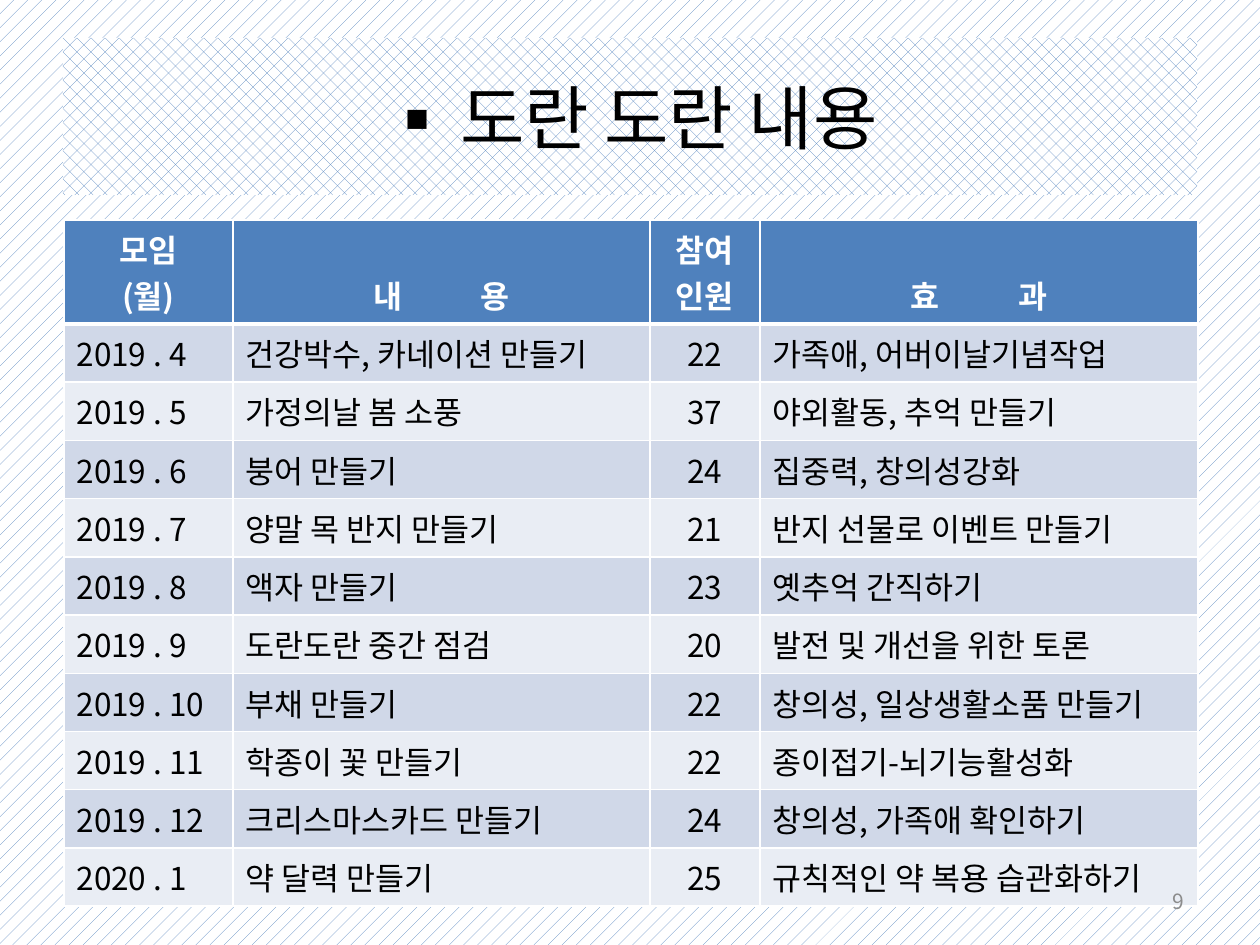
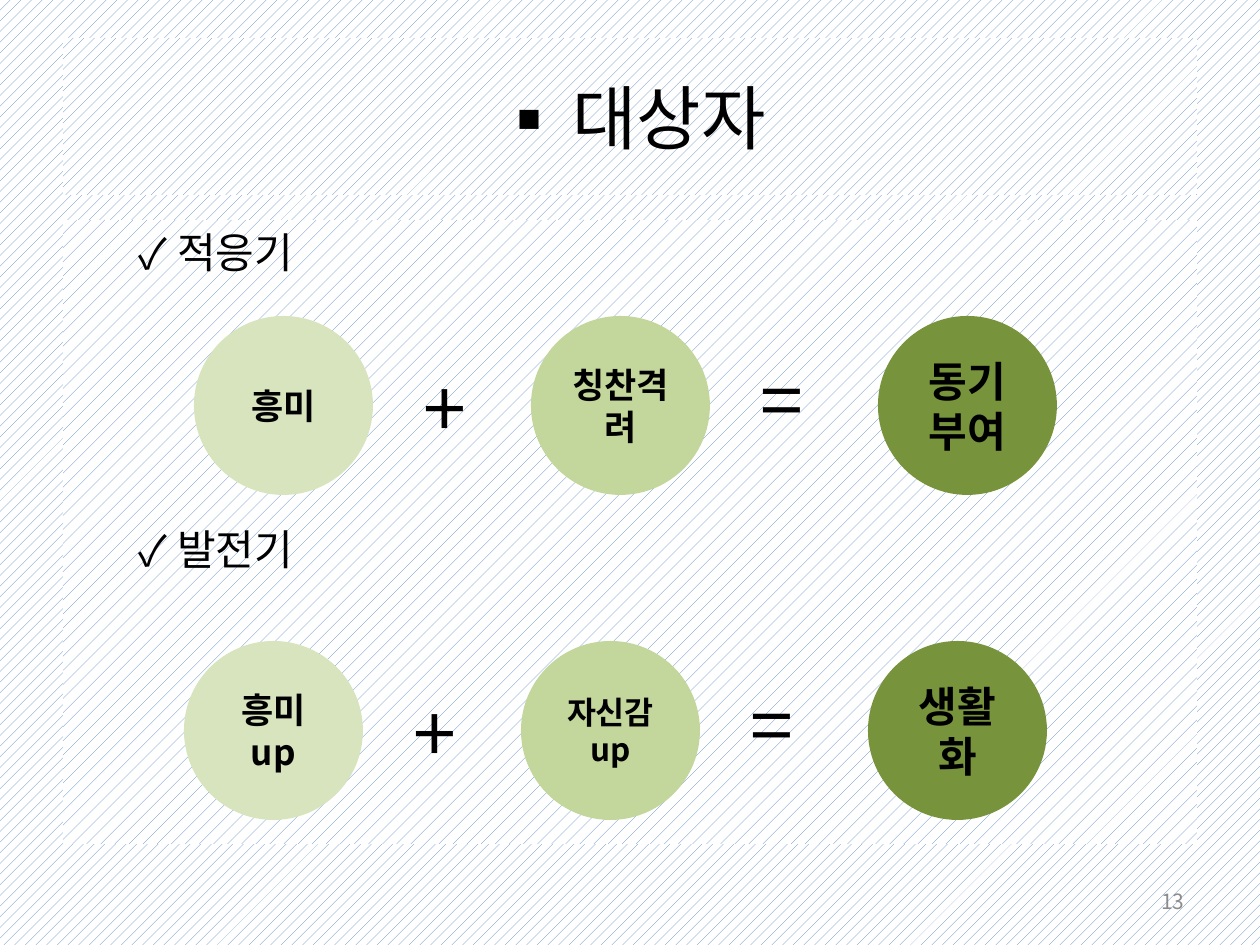
from dataclasses import dataclass

from lxml import etree
from pptx import Presentation
from pptx.dml.color import RGBColor
from pptx.enum.dml import MSO_PATTERN
from pptx.enum.shapes import MSO_SHAPE
from pptx.enum.text import MSO_ANCHOR, PP_ALIGN
from pptx.oxml.ns import qn
from pptx.util import Emu, Pt

PX_PER_INCH = 126
TITLE_ONLY = 5
LEFT, CENTER, RIGHT = PP_ALIGN.LEFT, PP_ALIGN.CENTER, PP_ALIGN.RIGHT
MIDDLE, BOTTOM = MSO_ANCHOR.MIDDLE, MSO_ANCHOR.BOTTOM
SPARSE, LIGHT, CROSSED = (
    MSO_PATTERN.PERCENT_10, MSO_PATTERN.PERCENT_20, MSO_PATTERN.PERCENT_25)
OVAL, RECTANGLE = MSO_SHAPE.OVAL, MSO_SHAPE.RECTANGLE


@dataclass(frozen=True)
class Theme:
    font: str = "Noto Sans CJK KR"
    black: str = "000000"
    white: str = "FFFFFF"
    blue: str = "4F81BD"
    grey: str = "8C8C8C"
    bands: tuple = ("D0D8E8", "E9EDF4")
    greens: tuple = ("D7E4BD", "C3D69B", "77933C")
    title: int = 40
    symbol: int = 44
    heading: int = 24
    circle: int = 20
    table: int = 18
    page: int = 12


THEME = Theme()

COLUMN_WIDTHS = (169, 417, 110, 438)
COLUMN_ALIGNMENTS = (LEFT, LEFT, CENTER, LEFT)
HEADER_HEIGHT, ROW_HEIGHT = 103, 51
SPREAD_GAP = 41  # points added to the space between two spread letters
HEADERS = (("모임", "(월)"), ("내 용",), ("참여인원",), ("효 과",))
SPREAD_HEADERS = ("내 용", "효 과")
MEETINGS = (
    ("2019 . 4", "건강박수, 카네이션 만들기", "22", "가족애, 어버이날기념작업"),
    ("2019 . 5", "가정의날 봄 소풍", "37", "야외활동, 추억 만들기"),
    ("2019 . 6", "붕어 만들기", "24", "집중력, 창의성강화"),
    ("2019 . 7", "양말 목 반지 만들기", "21", "반지 선물로 이벤트 만들기"),
    ("2019 . 8", "액자 만들기", "23", "옛추억 간직하기"),
    ("2019 . 9", "도란도란 중간 점검", "20", "발전 및 개선을 위한 토론"),
    ("2019 . 10", "부채 만들기", "22", "창의성, 일상생활소품 만들기"),
    ("2019 . 11", "학종이 꽃 만들기", "22", "종이접기-뇌기능활성화"),
    ("2019 . 12", "크리스마스카드 만들기", "24", "창의성, 가족애 확인하기"),
    ("2020 . 1", "약 달력 만들기", "25", "규칙적인 약 복용 습관화하기"),
)

CIRCLE_SIZE = 179
CIRCLE_OFFSETS = (0, 337, 684)
SYMBOL_OFFSETS = (("+", 217, 38), ("=", 554, 30))


def px(length):
    return Emu(round(length * 914400 / PX_PER_INCH))


def box(*lengths):
    return [px(length) for length in lengths]


def color(value):
    return RGBColor.from_string(value)


def add_run(paragraph, text, size, ink=THEME.black, bold=False):
    run = paragraph.add_run()
    run.text = text
    font = run.font
    font.name, font.size, font.bold = THEME.font, Pt(size), bold
    font.color.rgb = color(ink)
    properties = run._r.get_or_add_rPr()
    etree.SubElement(properties, qn("a:ea"), typeface=THEME.font)
    return run


def set_bullet(paragraph, character, indent, hanging):
    properties = paragraph._p.get_or_add_pPr()
    properties.set("marL", str(px(indent)))
    properties.set("indent", str(-px(hanging)))
    etree.SubElement(properties, qn("a:buFont"), typeface=THEME.font)
    etree.SubElement(properties, qn("a:buChar"), char=character)


def fill_pattern(fill, pattern):
    fill.patterned()
    fill.pattern = pattern
    fill.fore_color.rgb = color(THEME.blue)
    fill.back_color.rgb = color(THEME.white)


def add_page_number(slide, number):
    shape = slide.shapes.add_textbox(*box(904, 876, 293, 50))
    frame = shape.text_frame
    frame.word_wrap = True
    frame.vertical_anchor = MIDDLE
    paragraph = frame.paragraphs[0]
    paragraph.alignment = RIGHT
    add_run(paragraph, number, THEME.page, THEME.grey)


def add_titled_slide(presentation, title, background, title_pattern):
    slide = presentation.slides.add_slide(presentation.slide_layouts[TITLE_ONLY])
    fill_pattern(slide.background.fill, background)
    shape = slide.shapes.title
    shape.left, shape.top, shape.width, shape.height = box(63, 38, 1134, 157)
    fill_pattern(shape.fill, title_pattern)
    shape.text_frame.vertical_anchor = MIDDLE
    paragraph = shape.text_frame.paragraphs[0]
    paragraph.alignment = CENTER
    set_bullet(paragraph, "▪", 78, 78)
    add_run(paragraph, title, THEME.title)
    return slide


def style_cell(cell, fill, bottom_width=1):
    properties = cell._tc.get_or_add_tcPr()
    for side, width in (("L", 1), ("R", 1), ("T", 1), ("B", bottom_width)):
        line = etree.SubElement(properties, qn(f"a:ln{side}"), w=str(Pt(width)))
        solid = etree.SubElement(line, qn("a:solidFill"))
        etree.SubElement(solid, qn("a:srgbClr"), val=THEME.white)
    cell.fill.solid()
    cell.fill.fore_color.rgb = color(fill)


def write_header(cell, lines):
    style_cell(cell, THEME.blue, bottom_width=3)
    cell.vertical_anchor = BOTTOM
    frame = cell.text_frame
    for index, line in enumerate(lines):
        paragraph = frame.add_paragraph() if index else frame.paragraphs[0]
        paragraph.alignment = CENTER
        parts = line if line in SPREAD_HEADERS else (line,)
        for part in parts:
            run = add_run(paragraph, part, THEME.table, THEME.white, bold=True)
            if part == " ":
                run._r.get_or_add_rPr().set("spc", str(SPREAD_GAP * 100))


def add_meeting_table(slide):
    height = HEADER_HEIGHT + ROW_HEIGHT * len(MEETINGS)
    frame = slide.shapes.add_table(
        len(MEETINGS) + 1, len(COLUMN_WIDTHS),
        *box(64, 220, sum(COLUMN_WIDTHS), height))
    table = frame.table
    for column, width in zip(table.columns, COLUMN_WIDTHS):
        column.width = px(width)
    for index, row in enumerate(table.rows):
        row.height = px(ROW_HEIGHT if index else HEADER_HEIGHT)
    for column, lines in enumerate(HEADERS):
        write_header(table.cell(0, column), lines)
    for row, meeting in enumerate(MEETINGS, start=1):
        for column, text in enumerate(meeting):
            cell = table.cell(row, column)
            style_cell(cell, THEME.bands[(row - 1) % 2])
            paragraph = cell.text_frame.paragraphs[0]
            paragraph.alignment = COLUMN_ALIGNMENTS[column]
            add_run(paragraph, text, THEME.table)


def add_stage_panel(slide, stages, gap):
    """Lists the stages on a patterned panel, gap points apart."""
    panel = slide.shapes.add_shape(RECTANGLE, *box(63, 220, 1134, 624))
    panel.shadow.inherit = False
    fill_pattern(panel.fill, SPARSE)
    panel.line.fill.background()
    frame = panel.text_frame
    frame.vertical_anchor = MSO_ANCHOR.TOP
    for index, stage in enumerate(stages):
        paragraph = frame.add_paragraph() if index else frame.paragraphs[0]
        paragraph.alignment = LEFT
        paragraph.space_before = Pt(gap if index else 0)
        set_bullet(paragraph, "✓", 102, 39)
        add_run(paragraph, stage, THEME.heading)


def add_circle(slide, left, top, fill, text, size):
    circle = slide.shapes.add_shape(
        OVAL, *box(left, top, CIRCLE_SIZE, CIRCLE_SIZE))
    circle.shadow.inherit = False
    circle.fill.solid()
    circle.fill.fore_color.rgb = color(fill)
    circle.line.fill.background()
    circle.text_frame.vertical_anchor = MIDDLE
    paragraph = circle.text_frame.paragraphs[0]
    paragraph.alignment = CENTER
    add_run(paragraph, text, size, bold=True)


def add_equation(slide, left, top, terms):
    """Draws three circles joined by a plus and an equals sign."""
    for offset, fill, (text, size) in zip(CIRCLE_OFFSETS, THEME.greens, terms):
        add_circle(slide, left + offset, top, fill, text, size)
    for symbol, across, down in SYMBOL_OFFSETS:
        shape = slide.shapes.add_textbox(*box(left + across, top + down, 79, 106))
        shape.text_frame.word_wrap = False
        add_run(shape.text_frame.paragraphs[0], symbol, THEME.symbol)


def build_meetings(presentation):
    slide = add_titled_slide(presentation, "도란 도란 내용", SPARSE, CROSSED)
    add_meeting_table(slide)
    add_page_number(slide, "9")


def build_participants(presentation):
    slide = add_titled_slide(presentation, "대상자", LIGHT, LIGHT)
    add_stage_panel(slide, ("적응기", "발전기"), gap=141)
    add_equation(slide, 194, 316, (
        ("흥미", THEME.circle), ("칭찬격려", THEME.circle),
        ("동기부여", THEME.heading)))
    add_equation(slide, 184, 641, (
        ("흥미up", THEME.circle), ("자신감 up", THEME.table),
        ("생활화", THEME.heading)))
    add_page_number(slide, "13")


def main():
    presentation = Presentation()
    presentation.slide_width, presentation.slide_height = box(1260, 945)
    build_meetings(presentation)
    build_participants(presentation)
    presentation.save("out.pptx")


if __name__ == "__main__":
    main()
